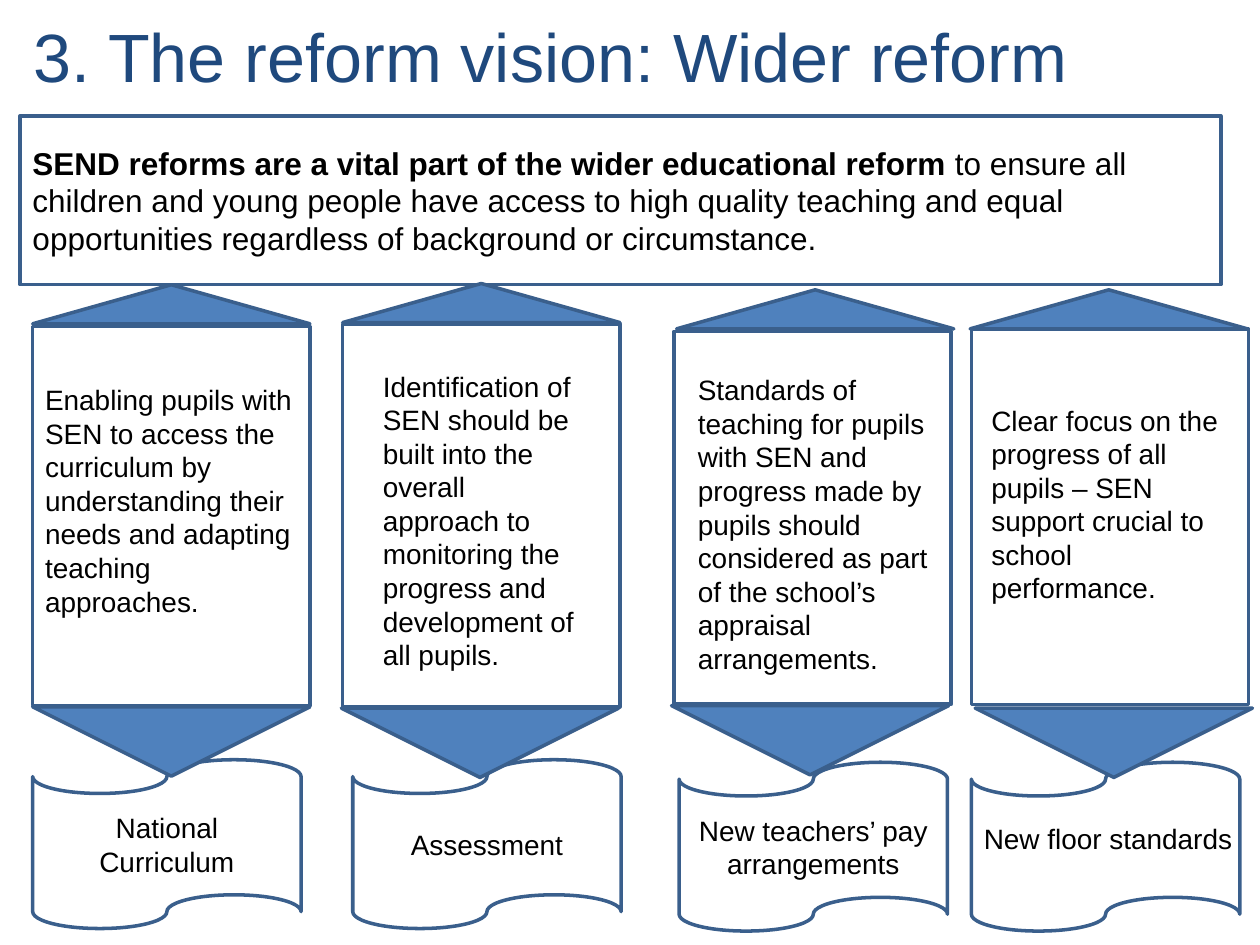
from lxml.etree import SubElement
from pptx import Presentation
from pptx.dml.color import RGBColor
from pptx.enum.shapes import MSO_SHAPE
from pptx.enum.text import MSO_ANCHOR, PP_ALIGN
from pptx.util import Inches, Pt

TITLE = "3. The reform vision: Wider reform"
BANNER = [
    ("SEND reforms are a vital part of the wider educational reform ", True),
    ("to ensure all children and young people have access to high quality teaching "
     "and equal opportunities regardless of background or circumstance.", False),
]
PILLARS = [
    dict(label="National Curriculum",
         body="Enabling pupils with SEN to access the curriculum by understanding "
              "their needs and adapting teaching approaches.",
         panel=(0.26, 2.59, 3.01), roof=(0.26, 2.26), tip=(0.26, 5.61), tape=(0.26, 6.03)),
    dict(label="Assessment",
         body="Identification of SEN should be built into the overall approach to "
              "monitoring the progress and development of all pupils.",
         body_box=(2.94, 2.88, 1.75, 2.52),
         panel=(2.72, 2.57, 3.04), roof=(2.72, 2.25), tip=(2.71, 5.62), tape=(2.8, 6.03)),
    dict(label="New teachers’ pay arrangements",
         body="Standards of teaching for pupils with SEN and progress made by pupils "
              "should considered as part of the school’s appraisal arrangements.",
         body_box=(5.44, 2.91, 2.13, 2.52),
         panel=(5.35, 2.63, 2.96), roof=(5.37, 2.3), tip=(5.33, 5.6), tape=(5.39, 6.05)),
    dict(label="New floor standards", label_box=(7.71, 6.47, 2.29, 0.37),
         body="Clear focus on the progress of all pupils – SEN support crucial to "
              "school performance.",
         body_box=(7.77, 3.15, 2.07, 1.99),
         panel=(7.71, 2.61, 2.98), roof=(7.7, 2.3), tip=(7.74, 5.62), tape=(7.71, 6.05)),
]
PILLAR_WIDTH, ROOF_HEIGHT, TIP_HEIGHT = 2.2, 0.31, 0.55
TAPE_SIZE = (2.13, 1.34)
BLUE, EDGE, NAVY, BLACK, WHITE = "4F81BD", "3A5F8C", "1F497D", "000000", "FFFFFF"

deck = Presentation()
deck.slide_width, deck.slide_height = Inches(10), Inches(7.5)
slide = deck.slides.add_slide(deck.slide_layouts[6])


def colour(hex_string):
    return RGBColor.from_string(hex_string)


def add_outline(preset, box, fill=None):
    shape = slide.shapes.add_shape(preset, *map(Inches, box))
    shape.shadow.inherit = False
    if fill:
        shape.fill.solid()
        shape.fill.fore_color.rgb = colour(fill)
    else:
        shape.fill.background()
    shape.line.color.rgb = colour(EDGE)
    shape.line.width = Pt(2)
    return shape


def write(holder, runs, size=16, ink=BLACK, align=PP_ALIGN.LEFT,
          anchor=MSO_ANCHOR.MIDDLE, bottom=0.05):
    frame = holder.text_frame
    frame.word_wrap = True
    frame.vertical_anchor = anchor
    frame.margin_bottom = Inches(bottom)
    paragraph = frame.paragraphs[0]
    paragraph.alignment = align
    for words, bold in runs:
        run = paragraph.add_run()
        run.text = words
        run.font.name, run.font.size, run.font.bold = "Arial", Pt(size), bold
        run.font.color.rgb = colour(ink)


def add_text(box, runs, **style):
    write(slide.shapes.add_textbox(*map(Inches, box)), runs, **style)


for pillar in PILLARS:
    tape = add_outline(MSO_SHAPE.FLOWCHART_PUNCHED_TAPE, (*pillar["tape"], *TAPE_SIZE))
    if "label_box" not in pillar:
        write(tape, [(pillar["label"], False)], align=PP_ALIGN.CENTER)

write(add_outline(MSO_SHAPE.RECTANGLE, (0.16, 0.92, 9.53, 1.34)), BANNER, size=18)

for pillar in PILLARS:
    left, top, height = pillar["panel"]
    panel = add_outline(MSO_SHAPE.RECTANGLE, (left, top, PILLAR_WIDTH, height), WHITE)
    if "body_box" not in pillar:
        write(panel, [(pillar["body"], False)], bottom=0.3)

for pillar in PILLARS:
    add_outline(MSO_SHAPE.ISOSCELES_TRIANGLE,
                (*pillar["roof"], PILLAR_WIDTH, ROOF_HEIGHT), BLUE)
    add_outline(MSO_SHAPE.FLOWCHART_MERGE,
                (*pillar["tip"], PILLAR_WIDTH, TIP_HEIGHT), BLUE)
    for part in ("body", "label"):
        if f"{part}_box" in pillar:
            add_text(pillar[f"{part}_box"], [(pillar[part], False)], anchor=MSO_ANCHOR.TOP)

add_text((0.17, 0, 9, 0.87), [(TITLE, False)], size=39, ink=NAVY)

deck.save("out.pptx")
